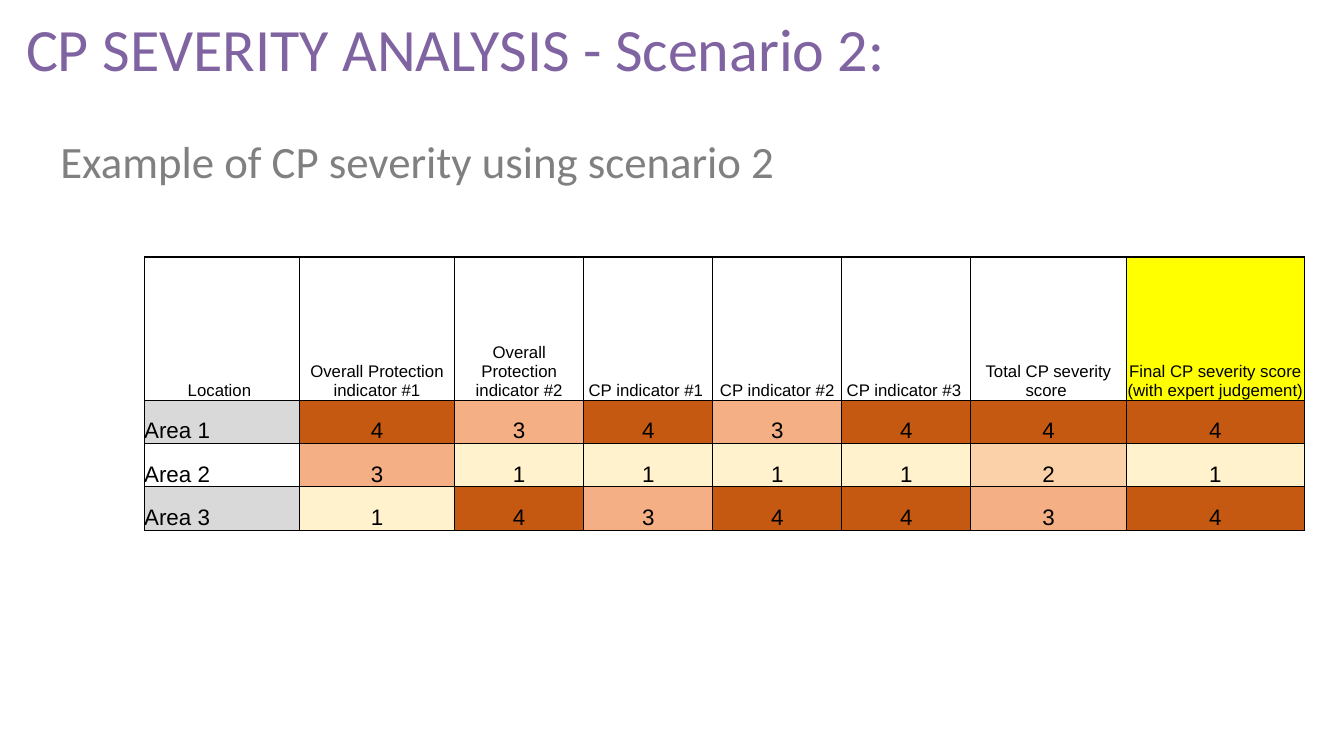
from lxml import etree
from pptx import Presentation
from pptx import util as u
from pptx.dml.color import RGBColor
from pptx.enum import text
from pptx.oxml import ns

PX = 9144  # 100 px to the inch


def color(hex_string):
    return RGBColor.from_string(hex_string)


def style(paragraph, font_name, size, hex_string, align=text.PP_ALIGN.LEFT):
    paragraph.alignment = align
    paragraph.font.name = font_name
    paragraph.font.size = u.Pt(size)
    paragraph.font.color.rgb = color(hex_string)


presentation = Presentation()
presentation.slide_width = 1333 * PX
presentation.slide_height = 750 * PX
slide = presentation.slides.add_slide(presentation.slide_layouts[6])

# Title and subtitle
headings = [
    ("CP SEVERITY ANALYSIS - Scenario 2:", (16, -15, 1012, 125), 42.9, "8064A2", text.MSO_ANCHOR.MIDDLE),
    ("Example of CP severity using scenario 2", (50, 128, 900, 169), 32, "808080", text.MSO_ANCHOR.TOP),
]
for words, box, size, font_color, anchor in headings:
    frame = slide.shapes.add_textbox(*(length * PX for length in box)).text_frame
    frame.word_wrap = True
    frame.vertical_anchor = anchor
    frame.text = words
    style(frame.paragraphs[0], "Calibri", size, font_color)

# Severity table
rows = [
    ["Location ", "Overall Protection indicator #1", "Overall Protection indicator #2",
     "CP indicator #1 ", "CP indicator #2", "CP indicator #3 ",
     "Total CP severity score ", "Final CP severity score (with expert judgement)"],
    ["Area 1", "4", "3", "4", "3", "4", "4", "4"],
    ["Area 2", "3", "1", "1", "1", "1", "2", "1"],
    ["Area 3", "1", "4", "3", "4", "4", "3", "4"],
]
column_widths = [154, 154, 128, 128, 128, 128, 154, 177]
row_heights = [142, 43, 43, 43]
fills = {
    "1": "FFF2CC", "2": "FAD1A8", "3": "F4B084", "4": "C65911",
    "Area 1": "D9D9D9", "Area 3": "D9D9D9", rows[0][-1]: "FFFF00",
}

table = slide.shapes.add_table(
    len(rows), len(column_widths), 143 * PX, 255 * PX,
    sum(column_widths) * PX, sum(row_heights) * PX).table
table.first_row = table.horz_banding = False
for column, width in zip(table.columns, column_widths):
    column.width = width * PX
for row, height in zip(table.rows, row_heights):
    row.height = height * PX

for row_index, values in enumerate(rows):
    for column_index, value in enumerate(values):
        cell = table.cell(row_index, column_index)
        cell.text = value
        cell.vertical_anchor = text.MSO_ANCHOR.BOTTOM
        cell.margin_left = cell.margin_right = cell.margin_top = cell.margin_bottom = 0
        is_area = row_index > 0 and column_index == 0
        style(cell.text_frame.paragraphs[0], "Arial", 16 if row_index else 12, "000000",
              text.PP_ALIGN.LEFT if is_area else text.PP_ALIGN.CENTER)

        # Borders come before the fill in the cell properties
        properties = cell._tc.get_or_add_tcPr()
        for side in ("a:lnL", "a:lnR", "a:lnT", "a:lnB"):
            line = etree.SubElement(properties, ns.qn(side), w=str(u.Pt(1)))
            line_fill = etree.SubElement(line, ns.qn("a:solidFill"))
            etree.SubElement(line_fill, ns.qn("a:srgbClr"), val="000000")

        if value in fills:
            cell.fill.solid()
            cell.fill.fore_color.rgb = color(fills[value])
        else:
            cell.fill.background()

presentation.save("out.pptx")
